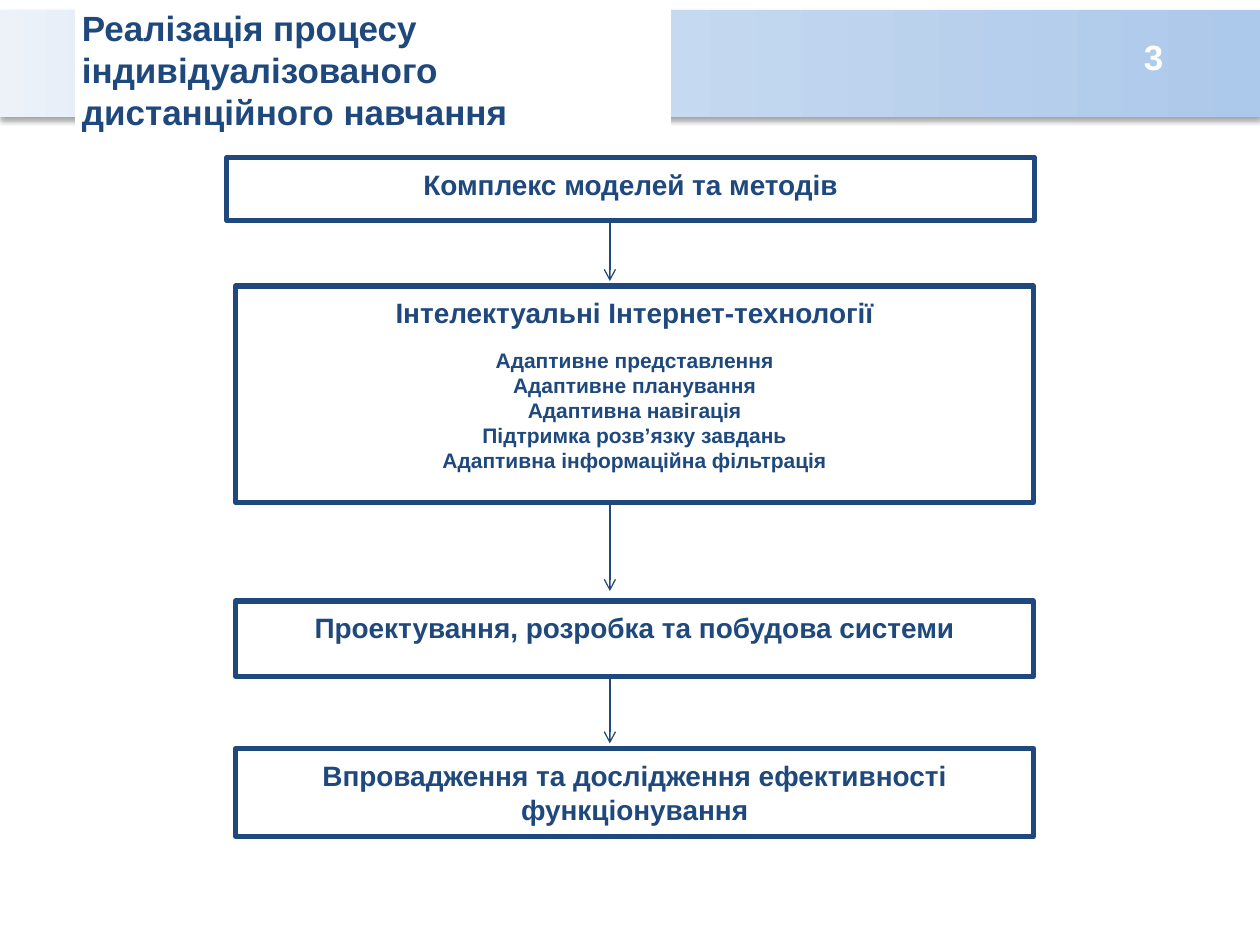
from copy import deepcopy
from dataclasses import dataclass

from lxml import etree
from pptx import Presentation
from pptx import oxml
from pptx import util as u
from pptx.dml.color import RGBColor
from pptx.enum import shapes, text

NS = "http://schemas.openxmlformats.org/drawingml/2006/main"


@dataclass(frozen=True)
class Theme:
    font: str = "Arial"
    navy: str = "1F497D"
    white: str = "FFFFFF"
    band: tuple = (("ACC8EA", 0), ("D8E5F4", 0.8), ("EDF2F9", 1))
    title_size: int = 20
    head_size: int = 16
    item_size: int = 12


def write(frame, lines, *, theme, color, size, sizes=None, align=None, after=None):
    for index, line in enumerate(lines):
        para = frame.paragraphs[0] if index == 0 else frame.add_paragraph()
        para.alignment = align
        if after is not None and index == 0:
            para.space_after = u.Pt(after)
        span = para.add_run()
        span.text = line
        span.font.name = theme.font
        span.font.size = u.Pt(sizes[index] if sizes else size)
        span.font.bold = True
        span.font.color.rgb = RGBColor.from_string(color)


class Builder:
    """Draws styled elements on the current slide."""

    def __init__(self, theme, page):
        self.theme = theme
        self.page = page

    def rectangle(self, left, top, width, height, line=None, weight=0):
        box = self.page.shapes.add_shape(
            shapes.MSO_SHAPE.RECTANGLE, *map(u.Pt, (left, top, width, height)))
        box.shadow.inherit = False
        box.fill.solid()
        box.fill.fore_color.rgb = RGBColor.from_string(self.theme.white)
        if line:
            box.line.color.rgb = RGBColor.from_string(line)
            box.line.width = u.Pt(weight)
        else:
            box.line.fill.background()
        return box

    def band(self, left, top, width, height):
        box = self.rectangle(left, top, width, height)
        box.fill.gradient()
        box.fill.gradient_angle = 180
        first, last = box.fill.gradient_stops
        stops = box.element.spPr.find(f".//{{{NS}}}gsLst")
        stops.insert(1, deepcopy(stops[0]))
        for stop, (color, position) in zip(box.fill.gradient_stops, self.theme.band):
            stop.color.rgb = RGBColor.from_string(color)
            stop.position = position
        effects = box.element.spPr.find(f"{{{NS}}}effectLst")
        effects.append(oxml.parse_xml(
            f'<a:outerShdw xmlns:a="{NS}" blurRad="{u.Pt(3.1)}" dist="{u.Pt(1.8)}" '
            'dir="5400000" rotWithShape="0"><a:srgbClr val="000000">'
            '<a:alpha val="35000"/></a:srgbClr></a:outerShdw>'))

    def arrow(self, x, top, bottom):
        line = self.page.shapes.add_connector(
            shapes.MSO_CONNECTOR.STRAIGHT, *map(u.Pt, (x, top, x, bottom)))
        line.line.color.rgb = RGBColor.from_string(self.theme.navy)
        line.line.width = u.Pt(0.75)
        etree.SubElement(line.line._get_or_add_ln(), f"{{{NS}}}tailEnd", type="arrow")
        etree.SubElement(line.element.spPr, f"{{{NS}}}effectLst")

    def title(self, lines, left, top, width, height):
        box = self.page.shapes.title
        box.left, box.top, box.width, box.height = map(u.Pt, (left, top, width, height))
        frame = box.text_frame
        frame.word_wrap = True
        frame.auto_size = text.MSO_AUTO_SIZE.NONE
        frame.vertical_anchor = text.MSO_ANCHOR.TOP
        write(frame, lines, theme=self.theme, color=self.theme.navy,
              size=self.theme.title_size, align=text.PP_ALIGN.LEFT)
        box.element.getparent().append(box.element)

    def stage(self, lines, left, top, width, height):
        box = self.rectangle(left, top, width, height, self.theme.navy, 3)
        frame = box.text_frame
        frame.word_wrap = True
        frame.vertical_anchor = text.MSO_ANCHOR.TOP
        frame.margin_top = u.Pt(5.76)
        sizes = [self.theme.head_size] + [self.theme.item_size] * (len(lines) - 1)
        write(frame, lines, theme=self.theme, color=self.theme.navy,
              size=self.theme.head_size, sizes=sizes,
              align=text.PP_ALIGN.CENTER, after=10)

    def number(self, value, left, top, width, height):
        box = self.page.shapes.add_textbox(*map(u.Pt, (left, top, width, height)))
        box.text_frame.word_wrap = True
        write(box.text_frame, [value], theme=self.theme, color=self.theme.white,
              size=self.theme.title_size)


def main():
    deck = Presentation()
    deck.slide_width, deck.slide_height = u.Pt(720), u.Pt(540)
    theme = Theme()
    builder = Builder(theme, deck.slides.add_slide(deck.slide_layouts[5]))

    for top, bottom in ((123.8, 160.6), (287.3, 337.7), (382.3, 424.8)):
        builder.arrow(348.5, top, bottom)
    builder.band(0, 5.8, 720, 61.2)
    builder.rectangle(43.9, 3.6, 338.4, 67.7, theme.white, 2)
    builder.title(["Реалізація процесу індивідуалізованого", "дистанційного навчання"],
                  39.6, 0, 365.8, 79.9)

    left, width = 134.8, 455.8
    builder.stage(["Комплекс моделей та методів"], 129.6, 90, 461.5, 36)
    builder.stage(["Інтелектуальні Інтернет-технології",
                   "Адаптивне представлення",
                   "Адаптивне планування",
                   "Адаптивна навігація",
                   "Підтримка розв’язку завдань",
                   "Адаптивна інформаційна фільтрація"], left, 163.4, width, 123.8)
    builder.stage(["Проектування, розробка та побудова системи"],
                  left, 343.4, width, 43.2)
    builder.stage(["Впровадження та дослідження ефективності функціонування"],
                  left, 427.7, width, 50.4)
    builder.number("3", 646.6, 16.6, 44.6, 31.7)
    deck.save("out.pptx")


if __name__ == "__main__":
    main()
